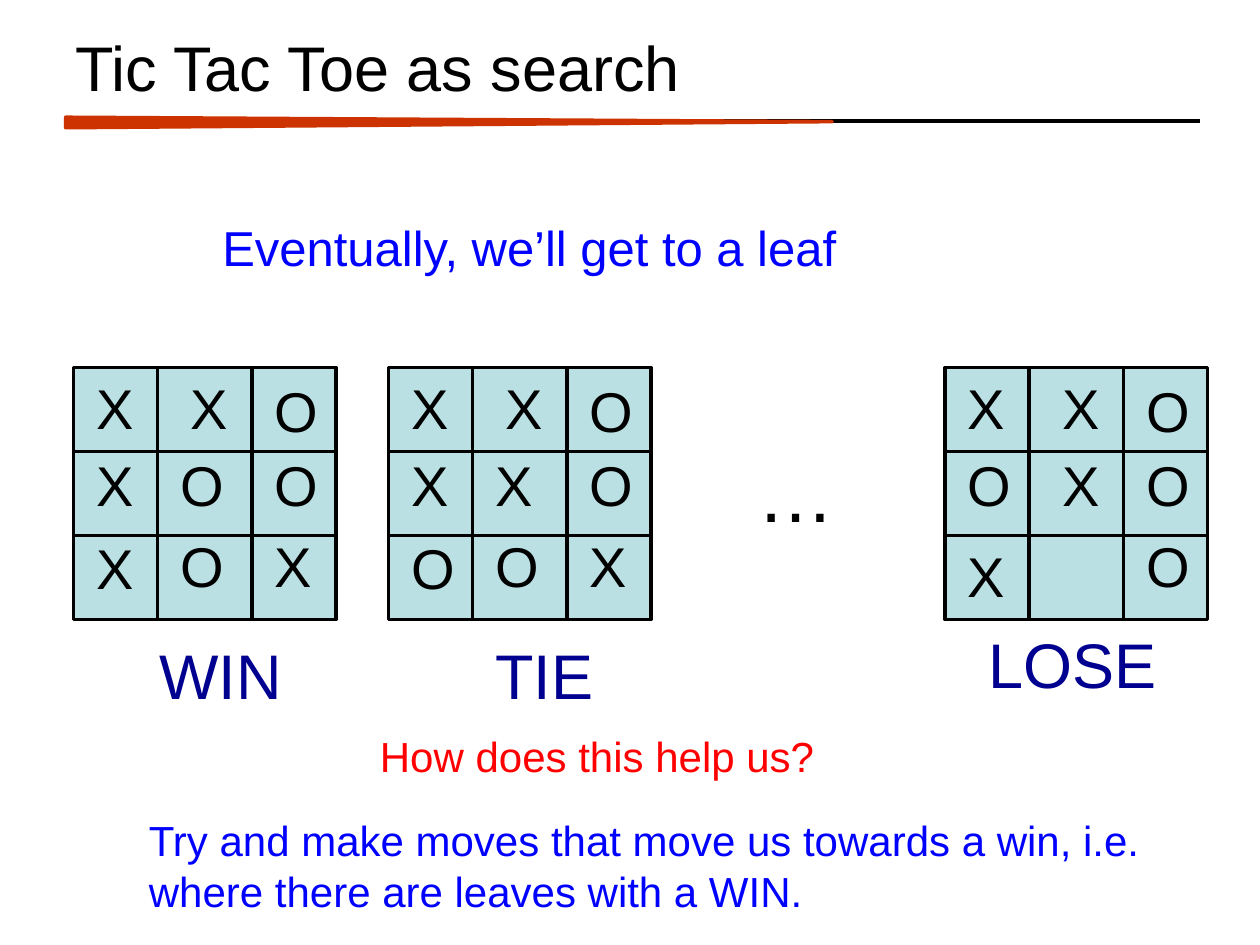
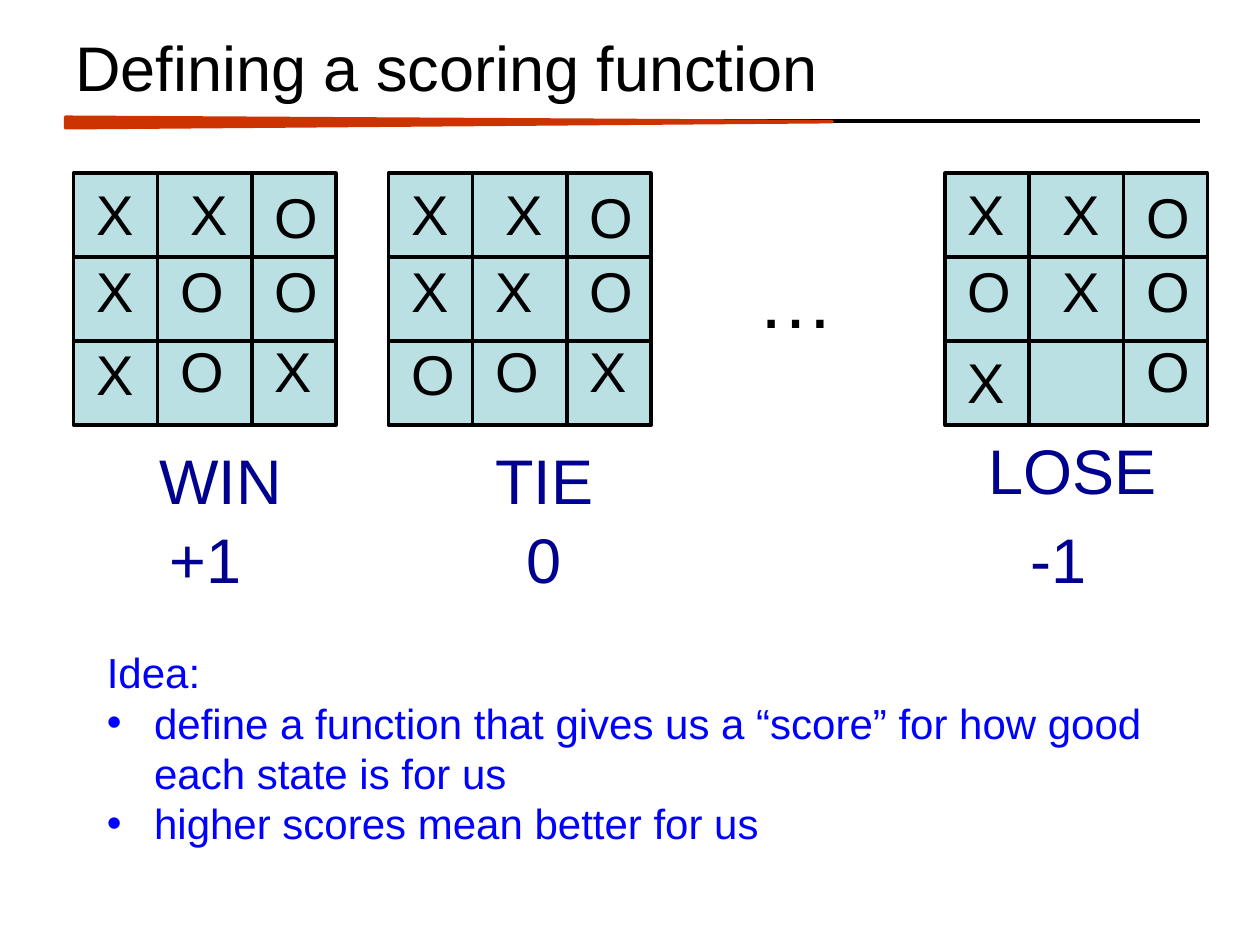
from dataclasses import dataclass, field

from lxml.etree import SubElement
from pptx import Presentation
from pptx.dml.color import RGBColor
from pptx.enum.shapes import MSO_CONNECTOR, MSO_SHAPE
from pptx.enum.text import MSO_ANCHOR, MSO_AUTO_SIZE
from pptx.oxml.ns import qn
from pptx.util import Pt

BLACK = RGBColor(0x00, 0x00, 0x00)
RUST = RGBColor(0xCC, 0x33, 0x00)
PALE_TEAL = RGBColor(0xBB, 0xE0, 0xE3)
BLUE = RGBColor(0x00, 0x00, 0xFF)
NAVY = RGBColor(0x00, 0x00, 0x90)
RED = RGBColor(0xFF, 0x00, 0x00)

FONT = "Arial"
LINE_WIDTH = 2
BULLET_INDENT = 27

BOARD_W, BOARD_H = 150, 144
COLUMN_LINES = (48, 102)
ROW_LINES = (48, 96)
MARK_X = (6, 60, 108)
MARK_Y = (0, 44, 90)
MARK_W, MARK_H = 48, 46
# Offsets of single marks from the grid, keyed by (row, column)
NUDGES = {(0, 2): (0, 1.5), (1, 1): (-6, 0), (2, 0): (0, 1.5), (2, 1): (-6, 0)}


@dataclass(frozen=True)
class TextBox:
    lines: tuple[str, ...]
    left: float
    top: float
    width: float
    height: float
    size: float
    color: RGBColor
    bullets_from: int | None = None
    wrap: bool = True
    anchor: MSO_ANCHOR = MSO_ANCHOR.TOP


@dataclass(frozen=True)
class Board:
    """A final position; label and score are placed relative to the board."""
    rows: tuple[str, str, str]
    left: float
    label: str
    label_x: float
    label_y: float
    label_w: float
    score: str
    score_x: float
    score_w: float
    nudges: dict = field(default_factory=dict)


BOARDS = (
    Board(("XXO", "XOO", "XOX"), 42, "WIN", 42, 150, 138, "+1", 48, 84),
    Board(("XXO", "XXO", "OOX"), 222, "TIE", 54, 150, 84, "0", 72, 42),
    Board(("XXO", "OXO", "X O"), 540, "LOSE", 18, 144, 138, "-1", 42, 60,
          {(1, 1): (0, 0), (2, 0): (0, 6)}),
)


def add_text(slide, box: TextBox) -> None:
    sp = slide.shapes.add_textbox(Pt(box.left), Pt(box.top), Pt(box.width), Pt(box.height))
    tf = sp.text_frame
    settings = {"word_wrap": box.wrap, "vertical_anchor": box.anchor,
                "auto_size": MSO_AUTO_SIZE.SHAPE_TO_FIT_TEXT}
    if box.anchor == MSO_ANCHOR.MIDDLE:
        settings["auto_size"] = MSO_AUTO_SIZE.NONE
    for name, value in settings.items():
        setattr(tf, name, value)
    for i, line in enumerate(box.lines):
        p = tf.paragraphs[0] if i == 0 else tf.add_paragraph()
        r = p.add_run()
        r.text = line
        for name, value in {"name": FONT, "size": Pt(box.size)}.items():
            setattr(r.font, name, value)
        r.font.color.rgb = box.color
        if box.bullets_from is not None and i >= box.bullets_from:
            add_bullet(p)


def add_bullet(p) -> None:
    pPr = p._p.get_or_add_pPr()
    pPr.set("marL", str(Pt(BULLET_INDENT)))
    pPr.set("indent", str(-Pt(BULLET_INDENT)))
    SubElement(pPr, qn("a:buFont")).set("typeface", FONT)
    SubElement(pPr, qn("a:buChar")).set("char", "•")


def add_line(shapes, x1: float, y1: float, x2: float, y2: float) -> None:
    cn = shapes.add_connector(MSO_CONNECTOR.STRAIGHT, Pt(x1), Pt(y1), Pt(x2), Pt(y2))
    cn.line.color.rgb = BLACK
    cn.line.width = Pt(LINE_WIDTH)
    SubElement(cn._element.spPr, qn("a:effectLst"))


def add_filled(shapes, kind: MSO_SHAPE, left: float, top: float, width: float,
               height: float, fill: RGBColor, line: RGBColor):
    sp = shapes.add_shape(kind, Pt(left), Pt(top), Pt(width), Pt(height))
    sp.shadow.inherit = False
    sp.fill.solid()
    sp.fill.fore_color.rgb = fill
    sp.line.color.rgb = line
    sp.line.width = Pt(LINE_WIDTH)
    return sp


def add_titled_slide(prs, title: str):
    slide = prs.slides.add_slide(prs.slide_layouts[6])
    add_line(slide.shapes, 37.5, 69, 685.5, 69)
    wedge = add_filled(slide.shapes, MSO_SHAPE.ISOSCELES_TRIANGLE,
                       253.5, -149, 6, 438, RUST, RUST)
    wedge.adjustments[0] = 0.42
    wedge.rotation = 90
    add_text(slide, TextBox((title,), 36, 12, 648, 52, 36, BLACK, anchor=MSO_ANCHOR.MIDDLE))
    return slide


def add_board(slide, board: Board, top: float) -> None:
    left = board.left
    grid = slide.shapes.add_group_shape().shapes
    add_filled(grid, MSO_SHAPE.RECTANGLE, left, top, BOARD_W, BOARD_H, PALE_TEAL, BLACK)
    for x in COLUMN_LINES:
        add_line(grid, left + x, top, left + x, top + BOARD_H)
    for y in ROW_LINES:
        add_line(grid, left, top + y, left + BOARD_W, top + y)

    nudges = NUDGES | board.nudges
    for row, marks in enumerate(board.rows):
        for col, mark in enumerate(marks):
            if mark == " ":
                continue
            dx, dy = nudges.get((row, col), (0, 0))
            add_text(slide, TextBox((mark,), left + MARK_X[col] + dx, top + MARK_Y[row] + dy,
                                    MARK_W, MARK_H, 32, BLACK))
    add_text(slide, TextBox((board.label,), left + board.label_x, top + board.label_y,
                            board.label_w, 51, 36, NAVY))


def add_leaves(slide, top: float) -> None:
    """Draw all final boards in a row, with an ellipsis before the last."""
    for board in BOARDS:
        add_board(slide, board, top)
    add_text(slide, TextBox(("…",), 426, top + 41, 162, 60, 44, BLACK))


def build_search_slide(prs) -> None:
    slide = add_titled_slide(prs, "Tic Tac Toe as search")
    add_leaves(slide, 210)
    for box in (
        TextBox(("Eventually, we’ll get to a leaf",), 120, 121, 468, 41, 28, BLUE),
        TextBox(("How does this help us?",), 210, 414, 265, 36, 24, RED, wrap=False),
        TextBox(("Try and make moves that move us towards a win, i.e. "
                 "where there are leaves with a WIN.",), 78, 462, 606, 65, 24, BLUE),
    ):
        add_text(slide, box)


def build_scoring_slide(prs) -> None:
    slide = add_titled_slide(prs, "Defining a scoring function")
    top = 99
    add_leaves(slide, top)
    for board in BOARDS:
        add_text(slide, TextBox((board.score,), board.left + board.score_x, top + 195,
                                board.score_w, 51, 36, NAVY))
    idea = ("Idea:",
            "define a function that gives us a “score” for how good each state is for us",
            "higher scores mean better for us")
    add_text(slide, TextBox(idea, 54, 366, 606, 124, 24, BLUE, bullets_from=1))


def main() -> None:
    prs = Presentation()
    prs.slide_width, prs.slide_height = Pt(720), Pt(540)
    build_search_slide(prs)
    build_scoring_slide(prs)
    prs.save("out.pptx")


if __name__ == "__main__":
    main()
